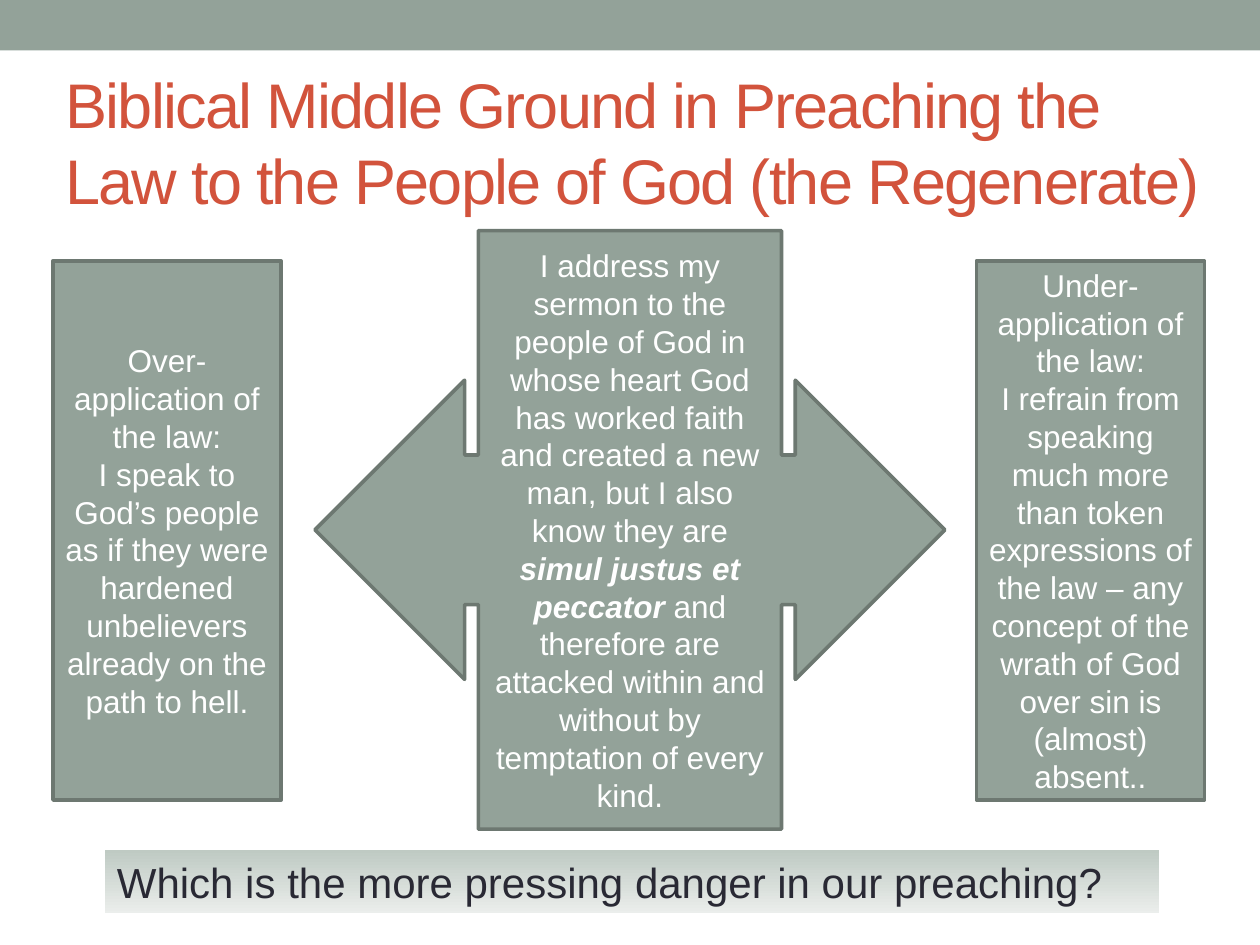
from pptx import Presentation
from pptx.dml.color import RGBColor
from pptx.enum.shapes import MSO_SHAPE
from pptx.enum.text import MSO_ANCHOR, PP_ALIGN
from pptx.util import Inches, Pt

SAGE = RGBColor(0x93, 0xA2, 0x99)
SAGE_DARK = RGBColor(0x6D, 0x78, 0x71)
SAGE_LIGHT = RGBColor(0xBF, 0xCA, 0xC3)
SAGE_PALE = RGBColor(0xEB, 0xEE, 0xEC)
BRICK = RGBColor(0xD2, 0x53, 0x3C)
INK = RGBColor(0x29, 0x29, 0x34)
WHITE = RGBColor(0xFF, 0xFF, 0xFF)

prs = Presentation()
prs.slide_width, prs.slide_height = Inches(10), Inches(7.5)
slide = prs.slides.add_slide(prs.slide_layouts[6])


def add_block(preset, left, top, width, height, outlined=True):
    block = slide.shapes.add_shape(
        preset, Inches(left), Inches(top), Inches(width), Inches(height))
    block.shadow.inherit = False
    block.fill.solid()
    block.fill.fore_color.rgb = SAGE
    if outlined:
        block.line.color.rgb = SAGE_DARK
        block.line.width = Pt(2.08)
    else:
        block.line.fill.background()
    return block


def write(shape, runs, size, color, align, anchor=MSO_ANCHOR.MIDDLE):
    """Fill the shape with one paragraph of (text, emphasised) runs."""
    frame = shape.text_frame
    frame.word_wrap = True
    frame.vertical_anchor = anchor
    paragraph = frame.paragraphs[0]
    paragraph.alignment = align
    for index, (text, emphasised) in enumerate(runs):
        if index and runs[index - 1][0].endswith(":"):
            paragraph.add_line_break()
        run = paragraph.add_run()
        run.text = text
        format_values = {"name": "Arial", "size": Pt(size),
                         "bold": emphasised, "italic": emphasised}
        for attribute, value in format_values.items():
            setattr(run.font, attribute, value)
        run.font.color.rgb = color
    return paragraph


add_block(MSO_SHAPE.RECTANGLE, 0, 0, 10, 0.4, outlined=False)

title = slide.shapes.add_textbox(
    Inches(0.42), Inches(0.58), Inches(9.25), Inches(1.08))
heading = write(
    title,
    [("Biblical Middle Ground in Preaching the Law to the People of God "
      "(the Regenerate)", False)],
    36, BRICK, PP_ALIGN.LEFT)
heading.runs[0].font._element.set("spc", "-100")

middle_ground = add_block(MSO_SHAPE.LEFT_RIGHT_ARROW_CALLOUT, 2.5, 1.83, 5, 4.75)
write(
    middle_ground,
    [("I address my sermon to the people of God in whose heart God has worked "
      "faith and created a new man, but I also know they are ", False),
     ("simul justus et peccator ", True),
     ("and therefore are attacked within and without by temptation of every "
      "kind.", False)],
    18, WHITE, PP_ALIGN.CENTER)

extremes = [
    (0.42, "Over-application of the law:",
     "I speak to God’s people as if they were hardened unbelievers already on "
     "the path to hell."),
    (7.75, "Under-application of the law:",
     "I refrain from speaking much more than token expressions of the law – "
     "any concept of the wrath of God over sin is (almost) absent.."),
]
for left, error, description in extremes:
    extreme = add_block(MSO_SHAPE.RECTANGLE, left, 2.07, 1.81, 4.28)
    write(extreme, [(error, False), (description, False)],
          18, WHITE, PP_ALIGN.CENTER)

question = add_block(MSO_SHAPE.RECTANGLE, 0.83, 6.75, 8.37, 0.5, outlined=False)
question.fill.gradient()
question.fill.gradient_angle = 270
for stop, color in zip(question.fill.gradient_stops, (SAGE_LIGHT, SAGE_PALE)):
    stop.color.rgb = color
write(question, [("Which is the more pressing danger in our preaching?", False)],
      24, INK, PP_ALIGN.LEFT, MSO_ANCHOR.TOP)

prs.save("out.pptx")
